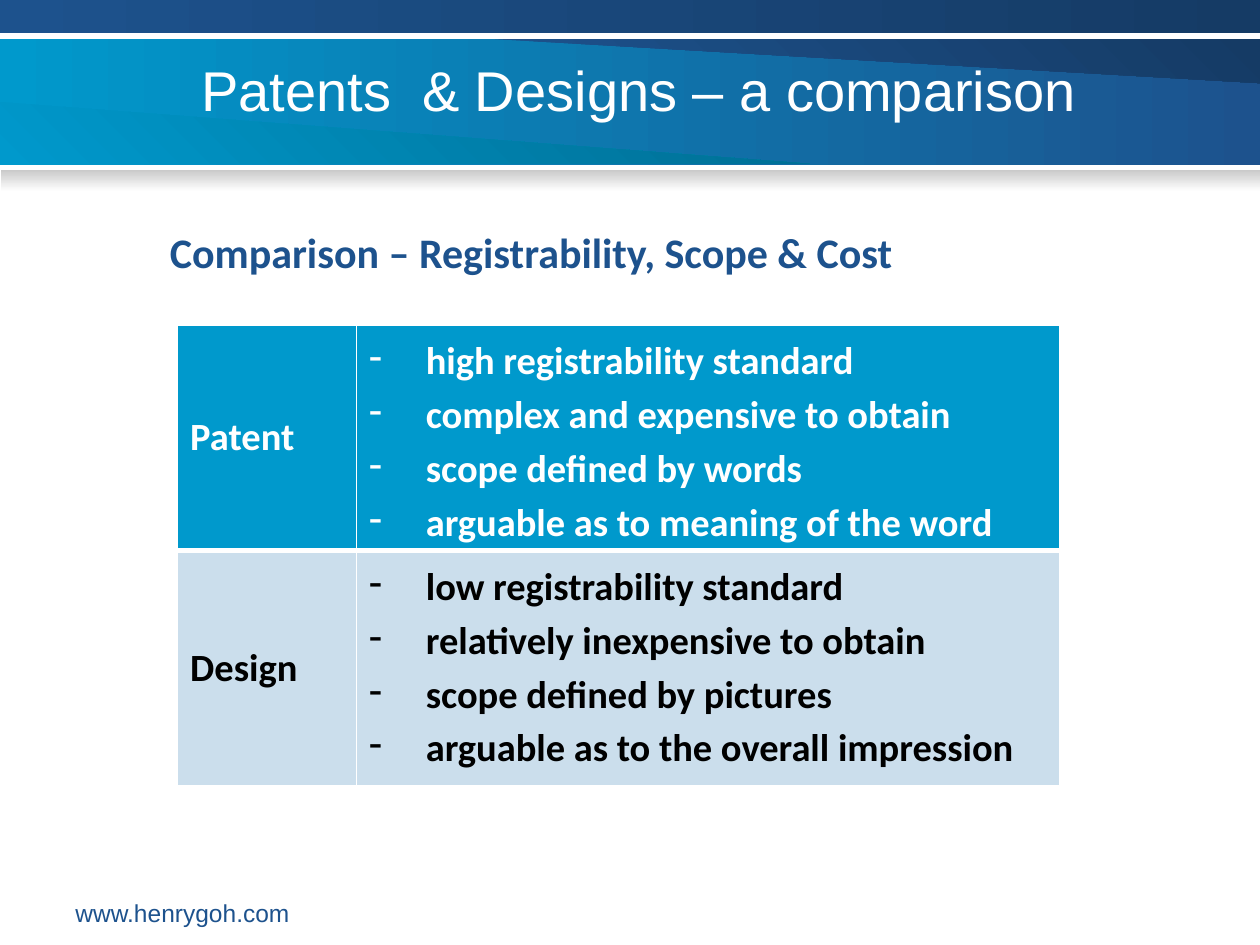
from lxml import etree
from pptx import Presentation
from pptx.dml.color import RGBColor
from pptx.enum.shapes import MSO_SHAPE
from pptx.enum.text import MSO_ANCHOR, PP_ALIGN
from pptx.oxml.ns import qn
from pptx.util import Inches, Pt

RECTANGLE = MSO_SHAPE.RECTANGLE
MIDDLE = MSO_ANCHOR.MIDDLE
JUSTIFY = PP_ALIGN.JUSTIFY

WHITE = RGBColor(0xFF, 0xFF, 0xFF)
BLACK = RGBColor(0x00, 0x00, 0x00)
BLUE = RGBColor(0x1D, 0x52, 0x8D)
NAVY = RGBColor(0x15, 0x3B, 0x65)
CYAN = RGBColor(0x00, 0x99, 0xCC)
TEAL = RGBColor(0x00, 0x6D, 0x92)
PALE = RGBColor(0xCB, 0xDE, 0xEC)
GREY = RGBColor(0xCA, 0xCA, 0xCA)

TITLE = "Patents  & Designs – a comparison"
HEADING = "Comparison – Registrability, Scope & Cost"
WEBSITE = "www.henrygoh.com"

# label, points, fill, text colour, row height
ROWS = [
    ("Patent", ["high registrability standard", "complex and expensive to obtain",
                "scope defined by words", "arguable as to meaning of the word"],
     CYAN, WHITE, 1.79),
    ("Design", ["low registrability standard", "relatively inexpensive to obtain",
                "scope defined by pictures", "arguable as to the overall impression"],
     PALE, BLACK, 1.87),
]
COLUMN_WIDTHS = [1.42, 5.58]

# left, top, width, height, start colour, end colour, angle
BANDS = [
    (0, 0.31, 10, 1, CYAN, BLUE, 0),
    (0, 0, 10, 0.26, BLUE, NAVY, 0),
    (0.01, 1.35, 9.99, 0.17, GREY, WHITE, 270),
]
# corner points, start colour, end colour, angle
WEDGES = [
    ([(3.93, 0.31), (10, 0.66), (10, 0.31)], BLUE, NAVY, 45),
    ([(0, 0.81), (6.43, 1.3), (0, 1.3)], CYAN, TEAL, 45),
]


def paint(shape, start, end, angle):
    """Give a shape a two-colour gradient, no line and no shadow."""
    shape.shadow.inherit = False
    shape.line.fill.background()
    shape.fill.gradient()
    shape.fill.gradient_angle = angle
    for stop, color in zip(shape.fill.gradient_stops, (start, end)):
        stop.color.rgb = color


def style(paragraph, font_name, size, color, bold=False):
    font = paragraph.font
    font.name, font.size, font.bold = font_name, Pt(size), bold
    font.color.rgb = color


def add_text(slide, box, text, font_name, size, color, bold=False, wrap=True):
    frame = slide.shapes.add_textbox(*map(Inches, box)).text_frame
    frame.word_wrap = wrap
    frame.text = text
    style(frame.paragraphs[0], font_name, size, color, bold)
    return frame


def add_dash(paragraph):
    properties = paragraph._p.get_or_add_pPr()
    properties.set("marL", str(Inches(0.45)))
    properties.set("indent", str(-Inches(0.45)))
    etree.SubElement(properties, qn("a:buChar"), char="-")


def add_borders(cell, top, bottom):
    """Draw white borders; the top and bottom widths are in points."""
    properties = cell._tc.get_or_add_tcPr()
    for side, width in (("L", 1), ("R", 1), ("T", top), ("B", bottom)):
        line = etree.SubElement(properties, qn(f"a:ln{side}"), w=str(Pt(width)))
        fill = etree.SubElement(line, qn("a:solidFill"))
        etree.SubElement(fill, qn("a:srgbClr"), val=str(WHITE))


def add_comparison(slide):
    heights = [row[-1] for row in ROWS]
    table = slide.shapes.add_table(
        len(ROWS), len(COLUMN_WIDTHS), Inches(1.41), Inches(2.58),
        Inches(sum(COLUMN_WIDTHS)), Inches(sum(heights))).table
    for column, width in zip(table.columns, COLUMN_WIDTHS):
        column.width = Inches(width)
    last = len(ROWS) - 1
    for index, (label, points, fill, color, height) in enumerate(ROWS):
        table.rows[index].height = Inches(height)
        label_cell, points_cell = table.rows[index].cells
        label_cell.text = label
        label_cell.vertical_anchor = MIDDLE
        points_cell.text = "\n".join(points)
        for paragraph in points_cell.text_frame.paragraphs:
            add_dash(paragraph)
            paragraph.line_spacing = 1.15
        for cell in (label_cell, points_cell):
            add_borders(cell, 3 if index > 0 else 1, 3 if index < last else 1)
            cell.fill.solid()
            cell.fill.fore_color.rgb = fill
            for paragraph in cell.text_frame.paragraphs:
                paragraph.alignment = JUSTIFY
                style(paragraph, "Calibri", 22, color, True)


def main():
    deck = Presentation()
    deck.slide_width, deck.slide_height = Inches(10), Inches(7.5)
    slide = deck.slides.add_slide(deck.slide_layouts[6])

    for *box, start, end, angle in BANDS:
        band = slide.shapes.add_shape(RECTANGLE, *map(Inches, box))
        paint(band, start, end, angle)
    for corners, start, end, angle in WEDGES:
        first, *others = [(Inches(x), Inches(y)) for x, y in corners]
        builder = slide.shapes.build_freeform(*first)
        builder.add_line_segments(others, close=True)
        paint(builder.convert_to_shape(), start, end, angle)

    title = add_text(slide, (1.5, 0.08, 9, 1.25), TITLE, "Arial", 32, WHITE)
    title.vertical_anchor = MIDDLE
    add_text(slide, (1.25, 1.75, 5.99, 0.51), HEADING, "Calibri", 24, BLUE,
             bold=True, wrap=False)
    add_comparison(slide)
    add_text(slide, (0.5, 7.08, 2.33, 0.27), WEBSITE, "Arial", 14, BLUE)
    deck.save("out.pptx")


if __name__ == "__main__":
    main()
